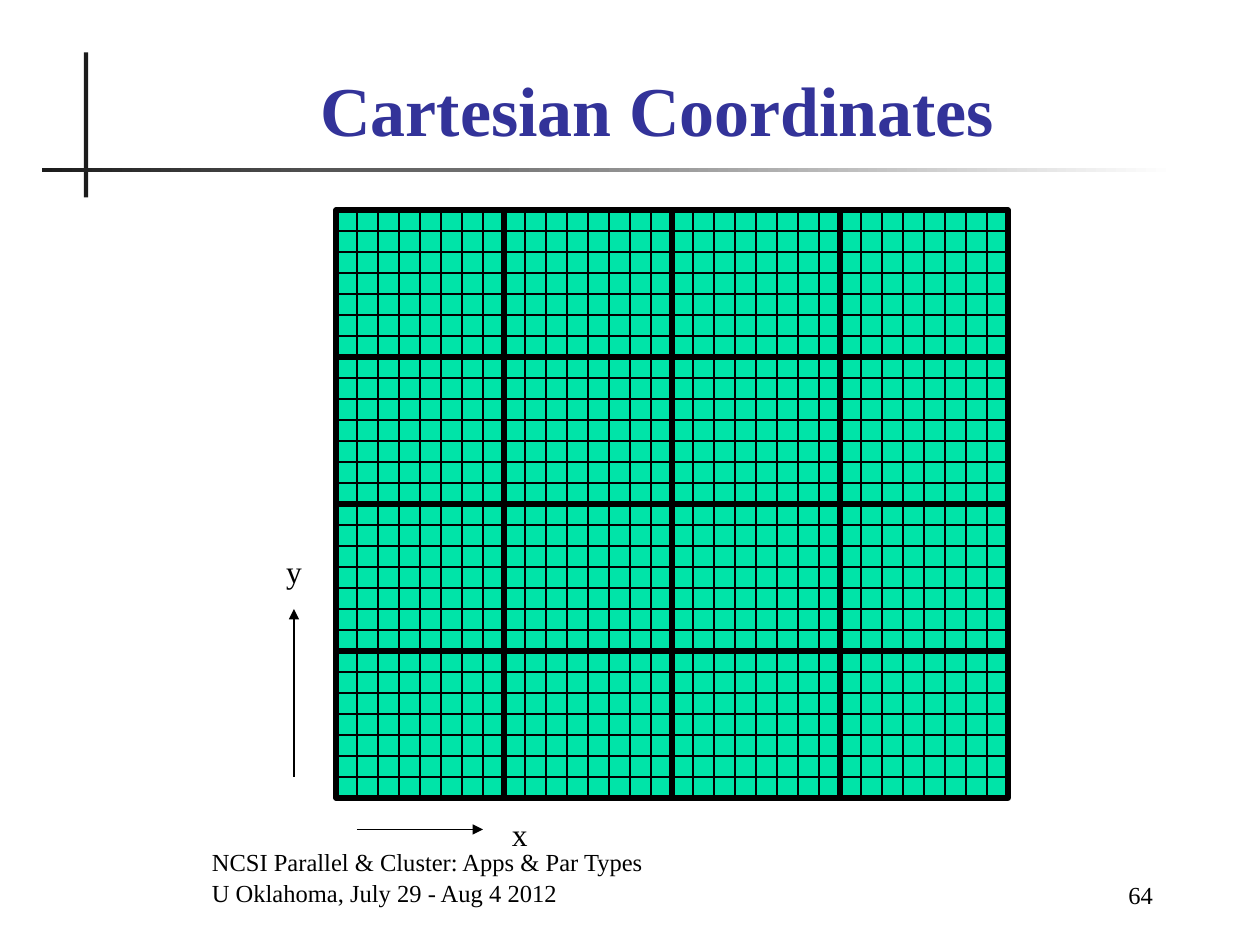
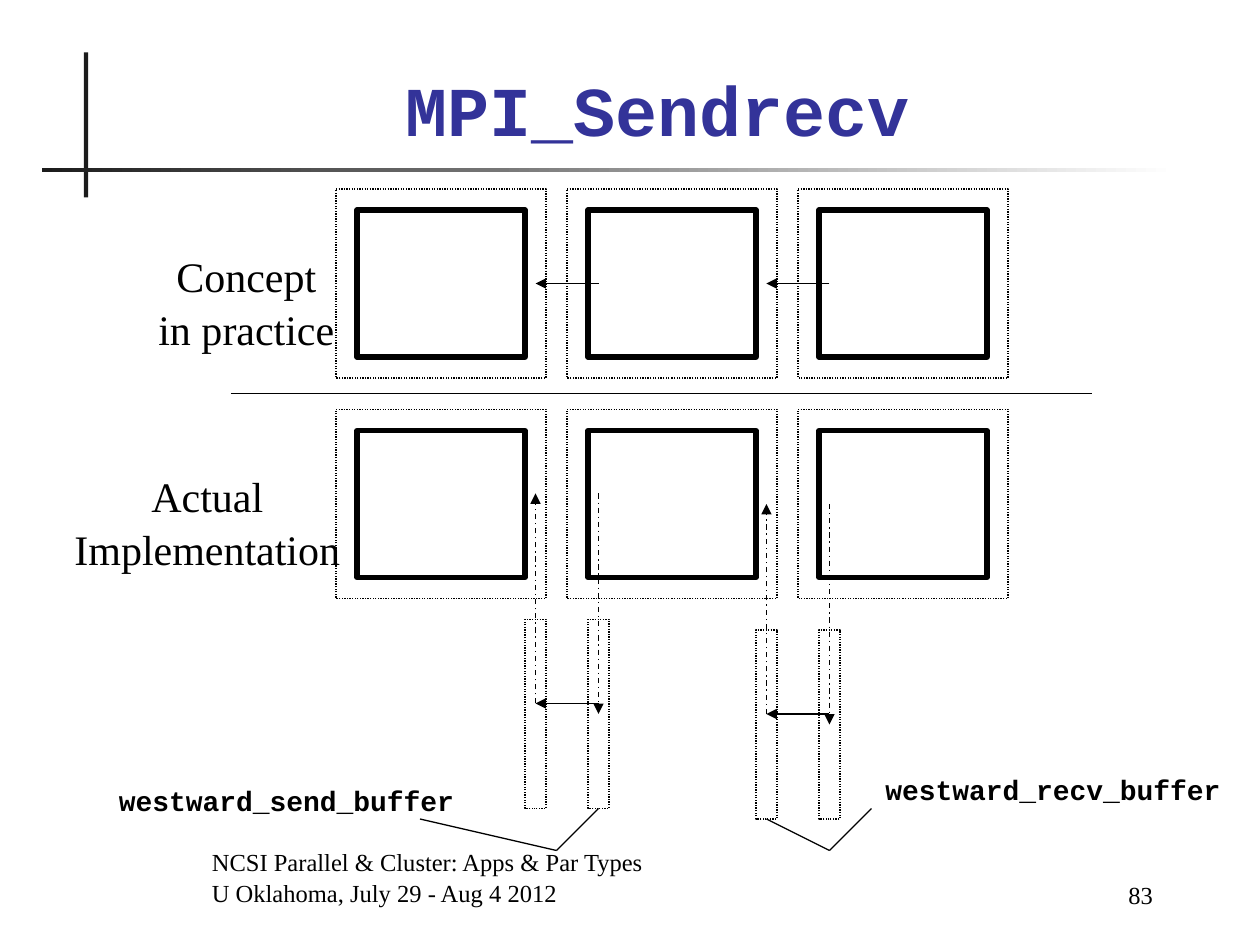
"""Build two slides on Cartesian grids and MPI_Sendrecv."""
from itertools import product

from lxml import etree
from pptx import Presentation
from pptx import util as u
from pptx.dml.color import RGBColor
from pptx.enum import dml, shapes, text
from pptx.oxml.ns import qn

COLORS = {"ink": "000000", "bar": "1C1C1C", "paper": "FFFFFF", "title": "333399", "mesh": "00E4A8"}
SERIF, MONO = "Times New Roman", "Courier New"
FOOTER = ["NCSI Parallel & Cluster: Apps & Par Types", "U Oklahoma, July 29 - Aug 4 2012"]
DOTTED, DASH_DOT = dml.MSO_LINE.ROUND_DOT, dml.MSO_LINE.DASH_DOT
CENTER, LEFT, RIGHT = text.PP_ALIGN.CENTER, text.PP_ALIGN.LEFT, text.PP_ALIGN.RIGHT


def color(name):
    """Return the named palette colour."""
    return RGBColor.from_string(COLORS[name])


class Deck:
    """Holds the shared style and the current slide."""

    def __init__(self):
        """Start a presentation of 720 by 540 points."""
        self.presentation = Presentation()
        self.presentation.slide_width = u.Pt(720)
        self.presentation.slide_height = u.Pt(540)
        self.slide = None

    def new_slide(self, title, number, font=SERIF):
        """Add a slide with its title, bars, footer and number."""
        self.slide = self.presentation.slides.add_slide(self.presentation.slide_layouts[5])
        self.box(48, 30, 2.4, 82.8, fill="bar", weight=0)
        rule = self.box(24, 96, 648, 2.4, fill="bar", weight=0)
        rule.fill.gradient()
        rule.fill.gradient_angle = 0
        for stop, name in zip(rule.fill.gradient_stops, ("bar", "paper")):
            stop.color.rgb = color(name)
        heading = self.slide.shapes.title
        heading.left, heading.top, heading.width, heading.height = map(u.Pt, (60, 36, 631.2, 53.5))
        self.set_text(heading, [title], 40, font, "title", bold=True, anchor=text.MSO_ANCHOR.BOTTOM)
        self.label(114, 486, 438, 36, FOOTER, 14, align=LEFT, anchor=text.MSO_ANCHOR.BOTTOM)
        self.label(564, 487.5, 102, 36, [number], 14, align=RIGHT, anchor=text.MSO_ANCHOR.BOTTOM)

    def set_text(self, shape, lines, size, font=SERIF, ink="ink", bold=False,
                 align=CENTER, anchor=text.MSO_ANCHOR.TOP, wrap=True):
        """Fill a shape with one paragraph per line."""
        frame = shape.text_frame
        frame.auto_size = text.MSO_AUTO_SIZE.NONE
        frame.word_wrap = wrap
        frame.vertical_anchor = anchor
        for index, line in enumerate(lines):
            paragraph = frame.add_paragraph() if index else frame.paragraphs[0]
            paragraph.alignment = align
            if len(lines) > 1:
                paragraph.line_spacing = 1.05
            run = paragraph.add_run()
            run.text = line
            run.font.name = font
            run.font.size = u.Pt(size)
            run.font.bold = bold
            run.font.color.rgb = color(ink)

    def label(self, left, top, width, height, lines, size, **style):
        """Add a text box."""
        shape = self.slide.shapes.add_textbox(*map(u.Pt, (left, top, width, height)))
        self.set_text(shape, lines, size, **style)

    def box(self, left, top, width, height, fill=None, weight=0.75, dash=None):
        """Add a rectangle, unfilled unless a fill is named."""
        shape = self.slide.shapes.add_shape(
            shapes.MSO_SHAPE.RECTANGLE, *map(u.Pt, (left, top, width, height)))
        shape.shadow.inherit = False
        if fill:
            shape.fill.solid()
            shape.fill.fore_color.rgb = color(fill)
        else:
            shape.fill.background()
        if weight:
            self.stroke(shape.line, weight, dash)
        else:
            shape.line.fill.background()
        return shape

    def stroke(self, line, weight, dash):
        """Format an outline or a connector line."""
        line.color.rgb = color("ink")
        line.width = u.Pt(weight)
        if dash:
            line.dash_style = dash

    def line(self, x1, y1, x2, y2, arrow=False, dash=None):
        """Add a straight line, with an arrowhead at its end if asked."""
        connector = self.slide.shapes.add_connector(
            shapes.MSO_CONNECTOR.STRAIGHT, *map(u.Pt, (x1, y1, x2, y2)))
        self.stroke(connector.line, 0.75, dash)
        properties = connector._element.spPr
        if arrow:
            etree.SubElement(properties.find(qn("a:ln")), qn("a:tailEnd"), type="triangle")
        etree.SubElement(properties, qn("a:effectLst"))


def cartesian_slide(deck):
    """Draw the fine mesh, its 4 by 4 blocks and the axes."""
    deck.new_slide("Cartesian Coordinates", "64")
    left, top, cell, columns, rows, blocks = 192, 120, 12, 32, 28, 4
    width, height = columns * cell, rows * cell
    deck.box(left, top, width, height, fill="mesh")
    for column in range(1, columns):
        x = left + column * cell
        deck.line(x, top, x, top + height)
    for row in range(1, rows):
        y = top + row * cell
        deck.line(left, y, left + width, y)
    block_width, block_height = width / blocks, height / blocks
    for row, column in product(range(blocks), repeat=2):
        deck.box(left + column * block_width, top + row * block_height,
                 block_width, block_height, weight=3)
    deck.line(204, 474, 276, 474, arrow=True)
    deck.label(282, 462, 30, 28.8, ["x"], 18)
    deck.line(168, 444, 168, 348, arrow=True)
    deck.label(150, 312, 36, 28.8, ["y"], 18)


def sendrecv_slide(deck):
    """Draw the exchange in concept and through the buffers."""
    deck.new_slide("MPI_Sendrecv", "83", MONO)
    step = 132
    for top, column in product((108, 234), range(3)):
        left = 192 + column * step
        deck.box(left + 12, top + 12, 96, 84, weight=3)
        deck.box(left, top, 120, 108, dash=DOTTED)
    for pair in range(2):
        west, drop = 306 + pair * step, 6 * pair
        east = west + 36
        deck.line(east, 162, west, 162, arrow=True)
        for middle in (west, east):
            deck.box(middle - 6, 354 + drop, 12, 108, dash=DOTTED)
        deck.line(west, 402 + drop, west, 282 + drop, arrow=True, dash=DASH_DOT)
        deck.line(east, 282 + drop, east, 408 + drop, arrow=True, dash=DASH_DOT)
        deck.line(east, 402 + drop, west, 402 + drop, arrow=True)
    for x, y, elbow in ((498, 462, 474), (438, 468, 474), (342, 462, 318), (240, 468, 318)):
        deck.line(x, y, elbow, 486)
    deck.line(132, 225, 624, 225)
    deck.label(82.8, 138, 116, 65.5, ["Concept", "in practice"], 24, wrap=False)
    deck.label(34.5, 264, 168, 65.5, ["Actual", "Implementation"], 24, wrap=False)
    for left, top, name in ((60, 444, "westward_send_buffer"), (498, 438, "westward_recv_buffer")):
        deck.label(left, top, 207.4, 26.6, [name], 16, font=MONO, bold=True, wrap=False)


def main():
    """Build and save the deck."""
    deck = Deck()
    cartesian_slide(deck)
    sendrecv_slide(deck)
    deck.presentation.save("out.pptx")


if __name__ == "__main__":
    main()
